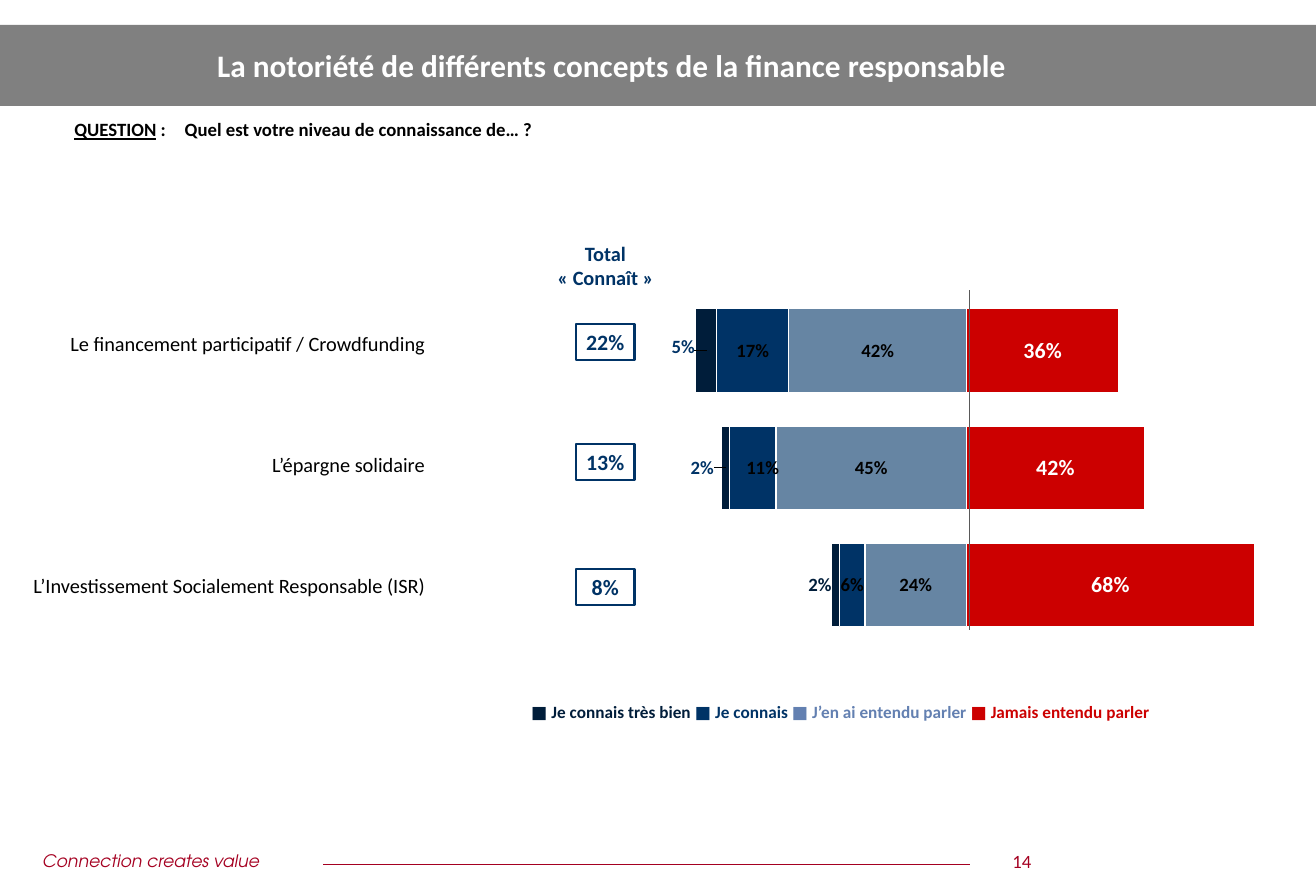
from lxml import etree
from pptx import Presentation
from pptx.chart.data import CategoryChartData
from pptx.dml.color import RGBColor
from pptx.enum.chart import XL_CHART_TYPE, XL_LABEL_POSITION
from pptx.enum.shapes import MSO_CONNECTOR, MSO_SHAPE
from pptx.enum.text import MSO_ANCHOR, PP_ALIGN
from pptx.oxml import parse_xml
from pptx.oxml.ns import nsdecls, qn
from pptx.util import Cm, Pt

LEFT, CENTER, RIGHT, JUSTIFY = PP_ALIGN.LEFT, PP_ALIGN.CENTER, PP_ALIGN.RIGHT, PP_ALIGN.JUSTIFY
TOP, MIDDLE = MSO_ANCHOR.TOP, MSO_ANCHOR.MIDDLE
LABEL_CENTER = XL_LABEL_POSITION.CENTER

COLORS = {
    "white": "FFFFFF", "black": "000000", "band": "808080", "brand": "A50021",
    "very_well": "001D3A", "know": "003366", "heard": "6685A3",
    "heard_text": "6380B1", "never": "CC0000", "axis": "595959",
}
FONT = "Calibri"
PERCENT = "0%;0%"

TITLE = "La notoriété de différents concepts de la finance responsable"
QUESTION = ("QUESTION", " :\tQuel est votre niveau de connaissance de… ?")
TAGLINE = "Connection creates value"
PAGE = "14"
TOTAL_HEADING = ["Total", "« Connaît »"]

# concept, total, top of its box in cm
CONCEPTS = [
    ("Le financement participatif / Crowdfunding", "22%", 7.32),
    ("L’épargne solidaire", "13%", 10.03),
    ("L’Investissement Socialement Responsable (ISR)", "8%", 12.85),
]
# name, values, fill, label colour, label size, label shifts {point: (x, y, colour)}
SERIES = [
    ("Jamais entendu parler", (0.36, 0.42, 0.68), "never", "white", 14, {}),
    ("J’en ai entendu parler", (-0.42, -0.45, -0.24), "heard", "black", 12, {}),
    ("Je connais", (-0.17, -0.11, -0.06), "know", "black", 12, {1: (0.013, 0, "black")}),
    ("Je connais très bien", (-0.05, -0.02, -0.02), "very_well", "know", 12,
     {0: (-0.03, -0.01, "know"), 1: (-0.03, 0, "know"), 2: (-0.02, 0, "very_well")}),
]
LEGEND_COLORS = {"heard": "heard_text"}


def rgb(name):
    return RGBColor.from_string(COLORS[name])


def style(font, size, color, bold=False, italic=False, name=FONT):
    font.name, font.size, font.bold, font.italic = name, Pt(size), bold, italic
    font.color.rgb = rgb(color)


def write(tf, lines, size, color, align=LEFT, anchor=TOP, **look):
    tf.word_wrap, tf.vertical_anchor = True, anchor
    for i, line in enumerate(lines):
        p = tf.paragraphs[0] if i == 0 else tf.add_paragraph()
        p.text, p.alignment = line, align
        style(p.font, size, color, **look)


def add_text(s, box, lines, size, color, **look):
    tf = s.shapes.add_textbox(*map(Cm, box)).text_frame
    write(tf, lines, size, color, **look)
    return tf


def add_rect(s, box, fill, line=None):
    sp = s.shapes.add_shape(MSO_SHAPE.RECTANGLE, *map(Cm, box))
    sp.shadow.inherit = False
    sp.fill.solid()
    sp.fill.fore_color.rgb = rgb(fill)
    if line:
        sp.line.color.rgb, sp.line.width = rgb(line), Pt(1.5)
    else:
        sp.line.fill.background()
    return sp


def add_line(s, ends, color):
    line = s.shapes.add_connector(MSO_CONNECTOR.STRAIGHT, *map(Cm, ends))
    line.line.color.rgb, line.line.width = rgb(color), Pt(0.5)
    etree.SubElement(line._element.spPr, qn("a:effectLst"))


def manual_layout(**parts):
    inner = "".join(f'<c:{tag} val="{val}"/>' for tag, val in parts.items())
    return parse_xml(f'<c:layout {nsdecls("c")}><c:manualLayout>{inner}</c:manualLayout></c:layout>')


def add_question(s):
    tf = add_text(s, (1.45, 2.57, 27.1, 0.71), [""], 12, "black", align=JUSTIFY, bold=True)
    tf.margin_left, tf.margin_right = Cm(0.23), Cm(0.91)
    tf.margin_top = tf.margin_bottom = Cm(0.1)
    p = tf.paragraphs[0]
    pPr = p._p.get_or_add_pPr()
    pPr.set("marL", str(Cm(2.49)))
    pPr.set("indent", str(-Cm(2.49)))
    for text in QUESTION:
        r = p.add_run()
        r.text, r.font.underline = text, text == QUESTION[0]


def add_concepts(s):
    row_height = 2.74
    table = s.shapes.add_table(len(CONCEPTS), 1, Cm(0.51), Cm(6.4), Cm(9.32),
                               Cm(row_height * len(CONCEPTS))).table
    table.first_row = table.horz_banding = False
    for i, (concept, total, top) in enumerate(CONCEPTS):
        cell = table.cell(i, 0)
        cell.fill.background()
        cell.vertical_anchor = MIDDLE
        cell.margin_left = cell.margin_top = cell.margin_bottom = 0
        cell.margin_right = Cm(0.25)
        p = cell.text_frame.paragraphs[0]
        p.text, p.alignment = concept, RIGHT
        style(p.font, 13, "black")
        tf = add_rect(s, (13, top, 1.32, 0.81), "white", "know").text_frame
        tf.margin_left = tf.margin_right = 0
        tf.margin_top = tf.margin_bottom = Cm(0.1)
        write(tf, [total], 14, "know", align=CENTER, anchor=MIDDLE, bold=True)


def add_awareness_chart(s):
    data = CategoryChartData(number_format=PERCENT)
    data.categories = [concept for concept, *_ in CONCEPTS]
    for name, values, *_ in SERIES:
        data.add_series(name, values)
    chart = s.shapes.add_chart(XL_CHART_TYPE.BAR_STACKED, Cm(14.17), Cm(6.43),
                               Cm(17.2), Cm(8.18), data).chart
    chart.has_legend = chart.has_title = False
    style(chart.font, 12, "black", bold=True)
    chart.category_axis.reverse_order = True
    chart.category_axis.visible = False
    axis = chart.value_axis
    axis.minimum_scale, axis.maximum_scale = -0.8, 1
    axis.has_major_gridlines = axis.visible = False

    plot_area = chart._chartSpace.chart.plotArea
    for old in plot_area.findall(qn("c:layout")):
        plot_area.remove(old)
    plot_area.insert(0, manual_layout(layoutTarget="inner", xMode="edge", yMode="edge",
                                      x=0, y=0.02, w=1, h=0.97))
    plot = chart.plots[0]
    plot.gap_width, plot.overlap, plot.vary_by_categories = 40, 100, False
    for series, (_, _, fill, color, size, shifts) in zip(plot.series, SERIES):
        series.invert_if_negative = False
        series.format.fill.solid()
        series.format.fill.fore_color.rgb = rgb(fill)
        series.format.line.color.rgb = rgb("white")
        series.format.line.width = Pt(0.75)
        labels = series.data_labels
        labels.show_value, labels.position = True, LABEL_CENTER
        labels.number_format, labels.number_format_is_linked = PERCENT, False
        style(labels.font, size, color, bold=True)
        for i, (x, y, point_color) in shifts.items():
            label = series.points[i].data_label
            style(label.font, size, point_color, bold=True)
            label.position = LABEL_CENTER
            idx = series._element.xpath(f'c:dLbls/c:dLbl/c:idx[@val="{i}"]')[0]
            idx.addnext(manual_layout(x=x, y=y))


def add_legend(s):
    tf = add_text(s, (11.25, 15.7, 15.52, 0.74), [""], 11, "black", align=CENTER, bold=True)
    for name, _, fill, *_ in reversed(SERIES):
        r = tf.paragraphs[0].add_run()
        r.text = f"■ {name} "
        r.font.color.rgb = rgb(LEGEND_COLORS.get(fill, fill))


def main():
    prs = Presentation()
    prs.slide_width, prs.slide_height = Cm(29.7), Cm(20)
    s = prs.slides.add_slide(prs.slide_layouts[6])
    add_rect(s, (0, 0.56, 29.7, 1.83), "band")
    add_text(s, (0.71, 19.08, 7.3, 0.74), [TAGLINE], 11, "brand",
             italic=True, name="TeX Gyre Adventor")
    add_line(s, (7.29, 19.51, 21.89, 19.51), "brand")
    add_text(s, (22.28, 19.05, 1.57, 0.76), [PAGE], 12, "brand", align=CENTER)
    add_text(s, (4.65, 0.56, 24.08, 1.83), [TITLE], 20, "white",
             align=JUSTIFY, anchor=MIDDLE, bold=True)
    add_question(s)
    add_concepts(s)
    add_text(s, (11.99, 5.31, 3.35, 1.37), TOTAL_HEADING, 13, "know", align=CENTER, bold=True)
    add_awareness_chart(s)
    add_line(s, (21.87, 6.55, 21.87, 14.22), "axis")
    add_legend(s)
    prs.save("out.pptx")


if __name__ == "__main__":
    main()
